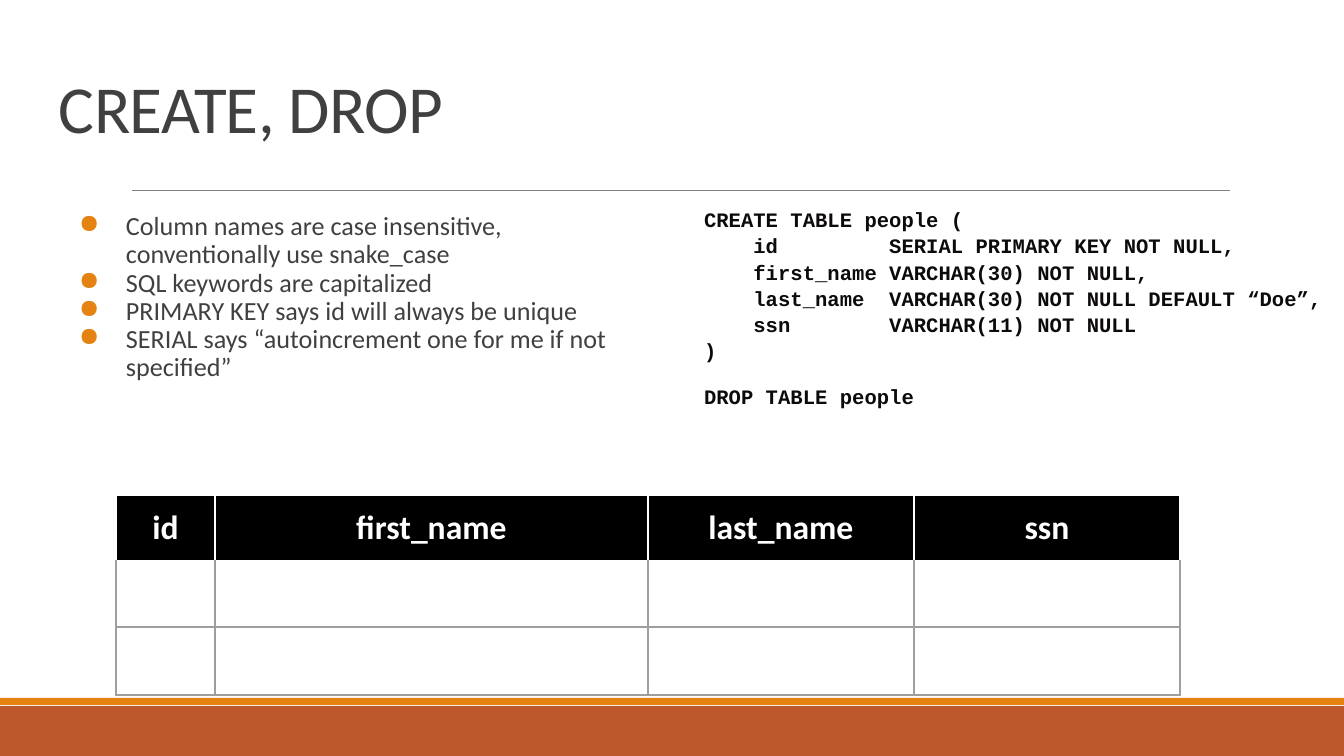
import pptx
import pptx.dml.color
import pptx.enum.shapes
import pptx.enum.text
import pptx.oxml
import pptx.oxml.ns
import pptx.util

SCALE = 914400 / 134.4
COLORS = {
    "rust": "BD582C", "orange": "E48312", "rule": "808080", "text": "404040",
    "code": "0D0A0B", "black": "000000", "white": "FFFFFF", "grid": "9E9E9E",
}
NOTES = [
    "Column names are case insensitive, conventionally use snake_case",
    "SQL keywords are capitalized",
    "PRIMARY KEY says id will always be unique",
    "SERIAL says “autoincrement one for me if not specified”",
]
COLUMNS = {
    "id": "SERIAL PRIMARY KEY NOT NULL,",
    "first_name": "VARCHAR(30) NOT NULL,",
    "last_name": "VARCHAR(30) NOT NULL DEFAULT “Doe”,",
    "ssn": "VARCHAR(11) NOT NULL",
}


def px(length):
    return round(length * SCALE)


def rgb(name):
    return pptx.dml.color.RGBColor.from_string(COLORS[name])


class SlideBuilder:
    """Holds the style and the current slide, and adds each kind of element."""

    body_font = "Calibri"
    code_font = "Courier New"
    inset = 13

    def __init__(self, presentation):
        self.slide = presentation.slides.add_slide(presentation.slide_layouts[5])

    def place(self, shape, left, top, width, height):
        shape.left, shape.top = px(left), px(top)
        shape.width, shape.height = px(width), px(height)

    def prepare_frame(self, text_frame):
        text_frame.word_wrap = True
        text_frame.auto_size = pptx.enum.text.MSO_AUTO_SIZE.NONE
        text_frame.vertical_anchor = pptx.enum.text.MSO_ANCHOR.TOP
        for side in ("left", "top", "right", "bottom"):
            setattr(text_frame, f"margin_{side}", px(self.inset))

    def format_runs(self, paragraph, size, color, font=body_font, bold=False):
        for run in paragraph.runs:
            run.font.size = pptx.util.Pt(size)
            run.font.name = font
            run.font.bold = bold
            run.font.color.rgb = rgb(color)

    def bar(self, left, top, width, height, color):
        shape = self.slide.shapes.add_shape(
            pptx.enum.shapes.MSO_SHAPE.RECTANGLE, px(left), px(top), px(width), px(height))
        shape.shadow.inherit = False
        shape.fill.solid()
        shape.fill.fore_color.rgb = rgb(color)
        shape.line.fill.background()

    def rule(self, left, right, y, color):
        connector = self.slide.shapes.add_connector(
            pptx.enum.shapes.MSO_CONNECTOR.STRAIGHT, px(left), px(y), px(right), px(y))
        connector.line.color.rgb = rgb(color)
        connector.line.width = pptx.util.Pt(0.5)
        properties = connector._element.spPr
        properties.append(pptx.oxml.parse_xml(
            f"<a:effectLst {pptx.oxml.ns.nsdecls('a')}/>"))

    def title(self, text, left, top, width, height):
        shape = self.slide.shapes.title
        self.place(shape, left, top, width, height)
        self.prepare_frame(shape.text_frame)
        shape.text_frame.text = text
        paragraph = shape.text_frame.paragraphs[0]
        paragraph.alignment = pptx.enum.text.PP_ALIGN.LEFT
        paragraph.line_spacing = 0.85
        self.format_runs(paragraph, 36, "text")
        paragraph.runs[0].font._element.set("spc", "-40")

    def text_box(self, lines, left, top, width, height):
        shape = self.slide.shapes.add_textbox(px(left), px(top), px(width), px(height))
        self.prepare_frame(shape.text_frame)
        shape.text_frame.text = "\n".join(lines)
        return shape.text_frame.paragraphs

    def bullets(self, lines, left, top, width, height):
        for paragraph in self.text_box(lines, left, top, width, height):
            paragraph.line_spacing = 0.9
            self.format_runs(paragraph, 14, "text")
            properties = paragraph._element.get_or_add_pPr()
            properties.set("marL", str(px(67)))
            properties.set("indent", str(px(-47)))
            namespace = pptx.oxml.ns.nsdecls("a")
            properties.append(pptx.oxml.parse_xml(
                f'<a:buClr {namespace}><a:srgbClr val="{COLORS["orange"]}"/></a:buClr>'))
            properties.append(pptx.oxml.parse_xml(f'<a:buChar {namespace} char="●"/>'))

    def code(self, lines, left, top, width, height):
        paragraphs = self.text_box(lines, left, top, width, height)
        for paragraph in paragraphs:
            paragraph.line_spacing = 1.06
            self.format_runs(paragraph, 11, "code", self.code_font, True)
        paragraphs[-1].line_spacing = 0.9
        paragraphs[-1].space_before = pptx.util.Pt(13)

    def borders(self, cell, color, top_color):
        properties = cell._tc.get_or_add_tcPr()
        sides = {"lnL": color, "lnR": color, "lnT": top_color, "lnB": color}
        for index, (side, name) in enumerate(sides.items()):
            properties.insert(index, pptx.oxml.parse_xml(
                f'<a:{side} {pptx.oxml.ns.nsdecls("a")} w="9525"><a:solidFill>'
                f'<a:srgbClr val="{COLORS[name]}"/></a:solidFill></a:{side}>'))

    def table(self, headers, left, top, widths, heights):
        table = self.slide.shapes.add_table(
            len(heights), len(widths), px(left), px(top),
            px(sum(widths)), px(sum(heights))).table
        for column, width in zip(table.columns, widths):
            column.width = px(width)
        for row_index, height in enumerate(heights):
            table.rows[row_index].height = px(height)
            for column_index, header in enumerate(headers):
                cell = table.cell(row_index, column_index)
                cell.vertical_anchor = pptx.enum.text.MSO_ANCHOR.MIDDLE
                cell.margin_left = cell.margin_right = px(self.inset)
                cell.margin_top = cell.margin_bottom = px(12)
                if row_index == 0:
                    cell.fill.solid()
                    cell.fill.fore_color.rgb = rgb("black")
                    cell.text_frame.text = header
                    paragraph = cell.text_frame.paragraphs[0]
                    paragraph.alignment = pptx.enum.text.PP_ALIGN.CENTER
                    self.format_runs(paragraph, 18, "white", bold=True)
                else:
                    cell.fill.background()
                self.borders(cell, "grid" if row_index else "white",
                             "grid" if row_index > 1 else "white")


def main():
    presentation = pptx.Presentation()
    presentation.slide_width, presentation.slide_height = px(1344), px(756)
    builder = SlideBuilder(presentation)
    builder.bar(0, 706, 1344, 50, "rust")
    builder.bar(0, 698, 1344, 7, "orange")
    builder.rule(132, 1230, 191, "rule")
    builder.title("CREATE, DROP", 46, 66, 1252, 85)
    builder.bullets(NOTES, 46, 200, 587, 490)
    definitions = [f"    {name:<10} {kind}" for name, kind in COLUMNS.items()]
    builder.code(["CREATE TABLE people (", *definitions, ")", "DROP TABLE people"],
                 691, 193, 653, 490)
    builder.table(list(COLUMNS), 116, 495, [99, 433, 266, 266], [66, 66, 68])
    presentation.save("out.pptx")


if __name__ == "__main__":
    main()
